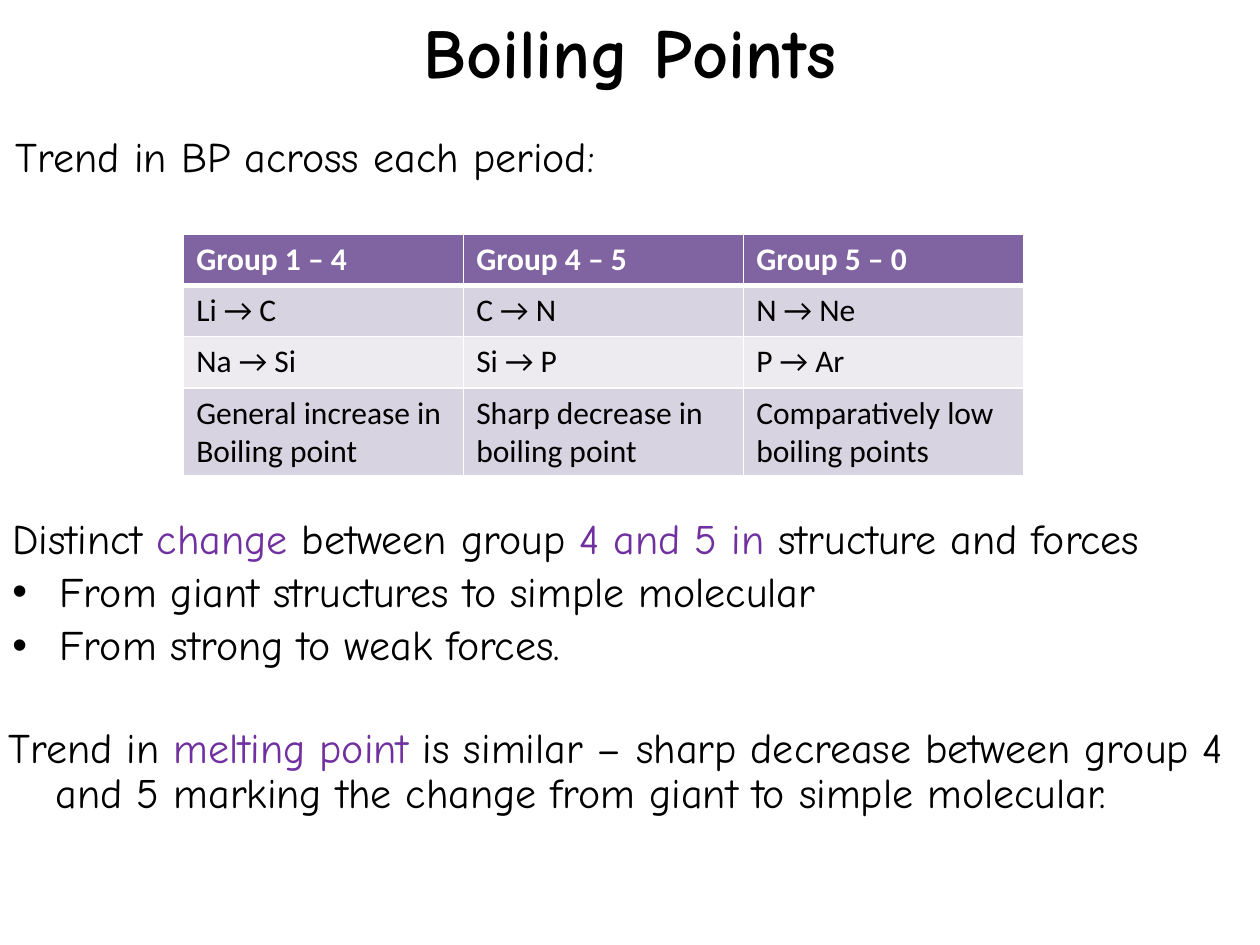
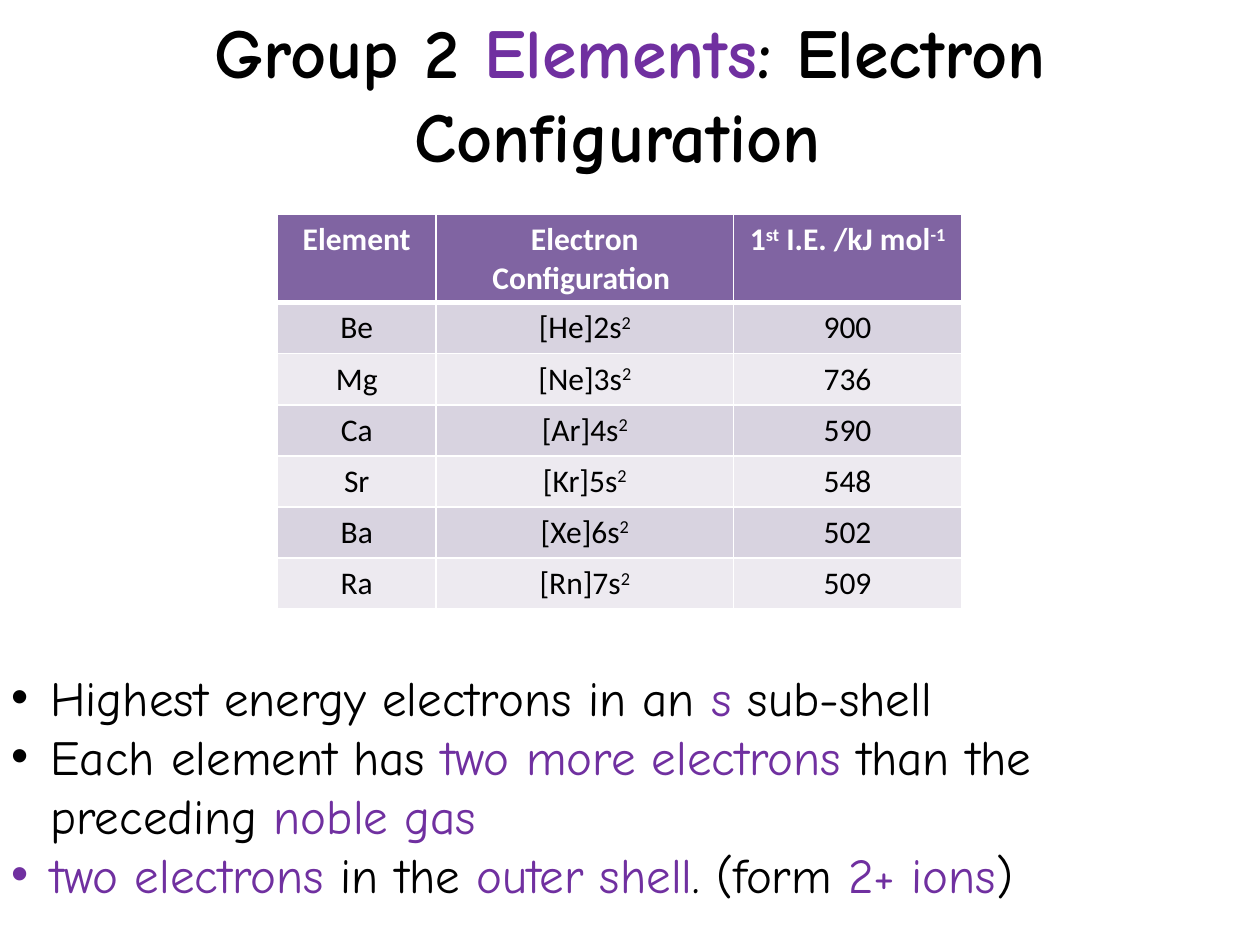
from lxml import etree
from pptx import Presentation
from pptx import util as u
from pptx.dml import color
from pptx.enum import text
from pptx.oxml import ns

COLOURS = {
    "ink": "000000",
    "accent": "7030A0",
    "paper": "FFFFFF",
    "header": "8064A2",
    "band_dark": "D8D3E0",
    "band_light": "EDEAF0",
}
HAND, PLAIN = "Comic Neue", "Calibri"
PAGE_WIDTH, PAGE_HEIGHT = 720, 540
ROW_HEIGHT = 29.2


def rgb(name):
    return color.RGBColor.from_string(COLOURS[name])


def add_span(para, words, size, font, colour, bold, raised):
    span = para.add_run()
    span.text = words
    span.font.size = u.Pt(size)
    span.font.name = font
    span.font.bold = bold
    span.font.color.rgb = rgb(colour)
    if raised:
        span.font._element.set("baseline", "30000")


def write(para, marked, *, size, font=HAND, colour="ink", bold=False,
          align=text.PP_ALIGN.LEFT, line=None, before=0, indent=0, bullet=False):
    """Text between asterisks is accented; text between carets is raised."""
    para.alignment = align
    para.space_before = u.Pt(before)
    if line:
        para.line_spacing = line
    props = para._p.get_or_add_pPr()
    if indent:
        props.set("marL", str(u.Pt(indent)))
        props.set("indent", str(-u.Pt(indent)))
    if bullet:
        etree.SubElement(props, ns.qn("a:buFont")).set("typeface", "Arial")
        etree.SubElement(props, ns.qn("a:buChar")).set("char", "•")
    for i, part in enumerate(marked.split("*")):
        for j, words in enumerate(part.split("^")):
            if words:
                add_span(para, words, size, font, "accent" if i % 2 else colour, bold, j % 2)


def add_text(page, box, lines, grow=False, **style):
    frame = page.shapes.add_textbox(*map(u.Pt, box)).text_frame
    frame.word_wrap = True
    frame.auto_size = text.MSO_AUTO_SIZE.SHAPE_TO_FIT_TEXT if grow else text.MSO_AUTO_SIZE.NONE
    for i, (marked, extra) in enumerate(lines):
        para = frame.add_paragraph() if i else frame.paragraphs[0]
        write(para, marked, **{**style, **extra})


def add_title(page, marked, height):
    add_text(page, (0, 1.5, PAGE_WIDTH, height), [(marked, {})], grow=True,
             size=40, bold=True, align=text.PP_ALIGN.CENTER)


def add_notes(page, box, lines):
    add_text(page, box, lines, size=24, line=0.9, before=4.5, indent=27)


def set_borders(cell, top, bottom):
    props = cell._tc.get_or_add_tcPr()
    for side, width in (("L", 1), ("R", 1), ("T", top), ("B", bottom)):
        edge = etree.SubElement(props, ns.qn("a:ln" + side), w=str(u.Pt(width)))
        fill = etree.SubElement(edge, ns.qn("a:solidFill"))
        etree.SubElement(fill, ns.qn("a:srgbClr"), val=COLOURS["paper"])


def add_grid(page, left, top, widths, rows, align):
    frame = page.shapes.add_table(len(rows), len(widths), u.Pt(left), u.Pt(top),
                                  u.Pt(sum(widths)), u.Pt(ROW_HEIGHT * len(rows)))
    grid = frame.table
    for column, width in zip(grid.columns, widths):
        column.width = u.Pt(width)
    for i, row in enumerate(rows):
        grid.rows[i].height = u.Pt(ROW_HEIGHT)
        heading = i == 0
        band = "header" if heading else "band_dark" if i % 2 else "band_light"
        for j, marked in enumerate(row):
            cell = grid.cell(i, j)
            set_borders(cell, 3 if i == 1 else 1, 3 if heading else 1)
            cell.fill.solid()
            cell.fill.fore_color.rgb = rgb(band)
            write(cell.text_frame.paragraphs[0], marked, size=18, font=PLAIN,
                  colour="paper" if heading else "ink", bold=heading, align=align)


def boiling_points(page):
    add_title(page, "Boiling Points", 55.5)
    add_notes(page, (2, 74, PAGE_WIDTH, 37), [("Trend in BP across each period:", {})])
    add_grid(page, 105, 134, [160] * 3, [
        ("Group 1 – 4", "Group 4 – 5", "Group 5 – 0"),
        ("Li → C", "C → N", "N → Ne"),
        ("Na → Si", "Si → P", "P → Ar"),
        ("General increase in Boiling point", "Sharp decrease in boiling point",
         "Comparatively low boiling points"),
    ], text.PP_ALIGN.LEFT)
    bullet = {"bullet": True}
    add_notes(page, (0, 292.5, PAGE_WIDTH, 102), [
        ("Distinct *change* between group *4 and 5 in *structure and forces", {}),
        ("From giant structures to simple molecular", bullet),
        ("From strong to weak forces.", bullet),
    ])
    add_notes(page, (-2.25, 412, PAGE_WIDTH, 96.5), [
        ("Trend in *melting point *is similar – sharp decrease between group 4 and 5 "
         "marking the change from giant to simple molecular.", {}),
    ])


def group_two(page):
    add_title(page, "Group 2 *Elements*: Electron Configuration ", 104.5)
    elements = [("Be", "He", 900), ("Mg", "Ne", 736), ("Ca", "Ar", 590),
                ("Sr", "Kr", 548), ("Ba", "Xe", 502), ("Ra", "Rn", 509)]
    rows = [("Element", "Electron Configuration ", "1^st^ I.E. /kJ mol^-1^")]
    rows += [(element, f"[{core}]{shell}s^2^", str(energy))
             for shell, (element, core, energy) in enumerate(elements, 2)]
    add_grid(page, 158.5, 122.5, [90.7, 170, 130.3], rows, text.PP_ALIGN.CENTER)
    add_text(page, (-0.75, 378, PAGE_WIDTH, 143.5), [
        ("Highest energy electrons in an *s* sub-shell", {}),
        ("Each element has *two more electrons *than the preceding *noble gas*", {}),
        ("*two electrons *in the *outer shell*. (form *2+ ions*)", {}),
    ], grow=True, size=28, indent=22.5, bullet=True)


def main():
    deck = Presentation()
    deck.slide_width, deck.slide_height = u.Pt(PAGE_WIDTH), u.Pt(PAGE_HEIGHT)
    for build in (boiling_points, group_two):
        build(deck.slides.add_slide(deck.slide_layouts[6]))
    deck.save("out.pptx")


if __name__ == "__main__":
    main()
